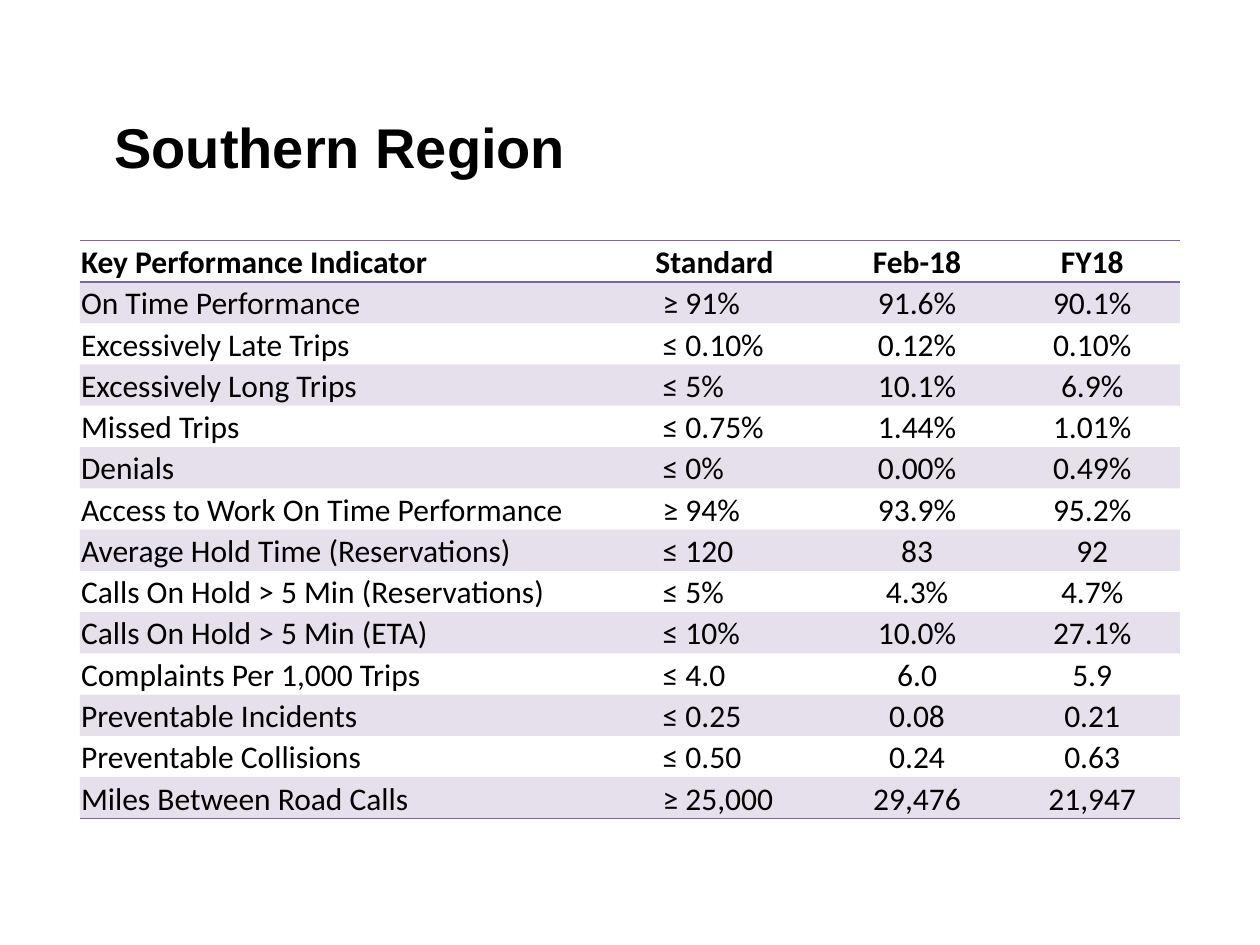
from lxml import etree
from pptx import Presentation
from pptx import util as u
from pptx.dml.color import RGBColor
from pptx.enum import text
from pptx.oxml import ns

Pt = u.Pt
BLACK = RGBColor(0x00, 0x00, 0x00)
PURPLE = RGBColor(0x80, 0x64, 0xA2)
NO_STYLE = "{2D5ABB26-0587-4C30-8999-92F81FD0307C}"

HEADER = ("Key Performance Indicator", "Standard", "Feb-18", "FY18")
INDICATORS = [
    ("On Time Performance", "≥ 91%", "91.6%", "90.1%"),
    ("Excessively Late Trips", "≤ 0.10%", "0.12%", "0.10%"),
    ("Excessively Long Trips", "≤ 5%", "10.1%", "6.9%"),
    ("Missed Trips", "≤ 0.75%", "1.44%", "1.01%"),
    ("Denials", "≤ 0%", "0.00%", "0.49%"),
    ("Access to Work On Time Performance", "≥ 94%", "93.9%", "95.2%"),
    ("Average Hold Time (Reservations)", "≤ 120", "83", "92"),
    ("Calls On Hold > 5 Min (Reservations)", "≤ 5%", "4.3%", "4.7%"),
    ("Calls On Hold > 5 Min (ETA)", "≤ 10%", "10.0%", "27.1%"),
    ("Complaints Per 1,000 Trips", "≤ 4.0", "6.0", "5.9"),
    ("Preventable Incidents", "≤ 0.25", "0.08", "0.21"),
    ("Preventable Collisions", "≤ 0.50", "0.24", "0.63"),
    ("Miles Between Road Calls", "≥ 25,000", "29,476", "21,947"),
]


class Deck:
    title_font, body_font = "Arial", "Calibri"
    title_size, body_size = 32, 18
    inset, standard_inset = 0.7, 4.8

    def __init__(self, s):
        self.s = s

    def set_text(self, p, words, name, size, bold):
        p.text = words
        p.font.name, p.font.size, p.font.bold = name, Pt(size), bold
        p.font.color.rgb = BLACK

    def title(self, words, left, top, width, height):
        sp = self.s.shapes.add_textbox(Pt(left), Pt(top), Pt(width), Pt(height))
        tf = sp.text_frame
        tf.word_wrap = True
        tf.vertical_anchor = text.MSO_ANCHOR.MIDDLE
        self.set_text(tf.paragraphs[0], words, self.title_font, self.title_size, True)

    def rule(self, cell, side):
        """Draw a purple border on one side, "T" or "B"; call before filling."""
        tc_pr = cell._tc.get_or_add_tcPr()
        ln = etree.SubElement(tc_pr, ns.qn(f"a:ln{side}"), w=str(Pt(1)))
        fill = etree.SubElement(ln, ns.qn("a:solidFill"))
        etree.SubElement(fill, ns.qn("a:srgbClr"), val=str(PURPLE))

    def band(self, cell):
        """Fill the cell with purple at 20% opacity."""
        cell.fill.solid()
        cell.fill.fore_color.rgb = PURPLE
        clr = cell._tc.tcPr.find(ns.qn("a:solidFill")).find(ns.qn("a:srgbClr"))
        etree.SubElement(clr, ns.qn("a:alpha"), val="20000")

    def table(self, rows, left, top, widths, row_height):
        frame = self.s.shapes.add_table(
            len(rows), len(widths), Pt(left), Pt(top),
            Pt(sum(widths)), Pt(row_height * len(rows)))
        tbl = frame.table
        tbl.first_row = tbl.horz_banding = False
        tbl._tbl.tblPr.find(ns.qn("a:tableStyleId")).text = NO_STYLE
        for column, width in zip(tbl.columns, widths):
            column.width = Pt(width)
        for i, row in enumerate(rows):
            tbl.rows[i].height = Pt(row_height)
            for j, words in enumerate(row):
                cell = tbl.cell(i, j)
                indented = i > 0 and j == 1
                cell.margin_left = Pt(self.standard_inset if indented else self.inset)
                cell.margin_right = cell.margin_top = Pt(self.inset)
                cell.margin_bottom = 0
                cell.vertical_anchor = text.MSO_ANCHOR.BOTTOM
                p = cell.text_frame.paragraphs[0]
                p.alignment = text.PP_ALIGN.CENTER if j > 1 else text.PP_ALIGN.LEFT
                self.set_text(p, words, self.body_font, self.body_size, i == 0)
                if i == 0:
                    self.rule(cell, "T")
                if i in (0, len(rows) - 1):
                    self.rule(cell, "B")
                if i % 2:
                    self.band(cell)
                else:
                    cell.fill.background()


def main():
    prs = Presentation()
    prs.slide_width, prs.slide_height = Pt(720), Pt(540)
    deck = Deck(prs.slides.add_slide(prs.slide_layouts[6]))
    deck.title("Southern Region", 58.3, 60.5, 604, 46)
    deck.table([HEADER] + INDICATORS, 45.6, 137.5, [328.3] + [100.1] * 3, 23.6)
    prs.save("out.pptx")


if __name__ == "__main__":
    main()
